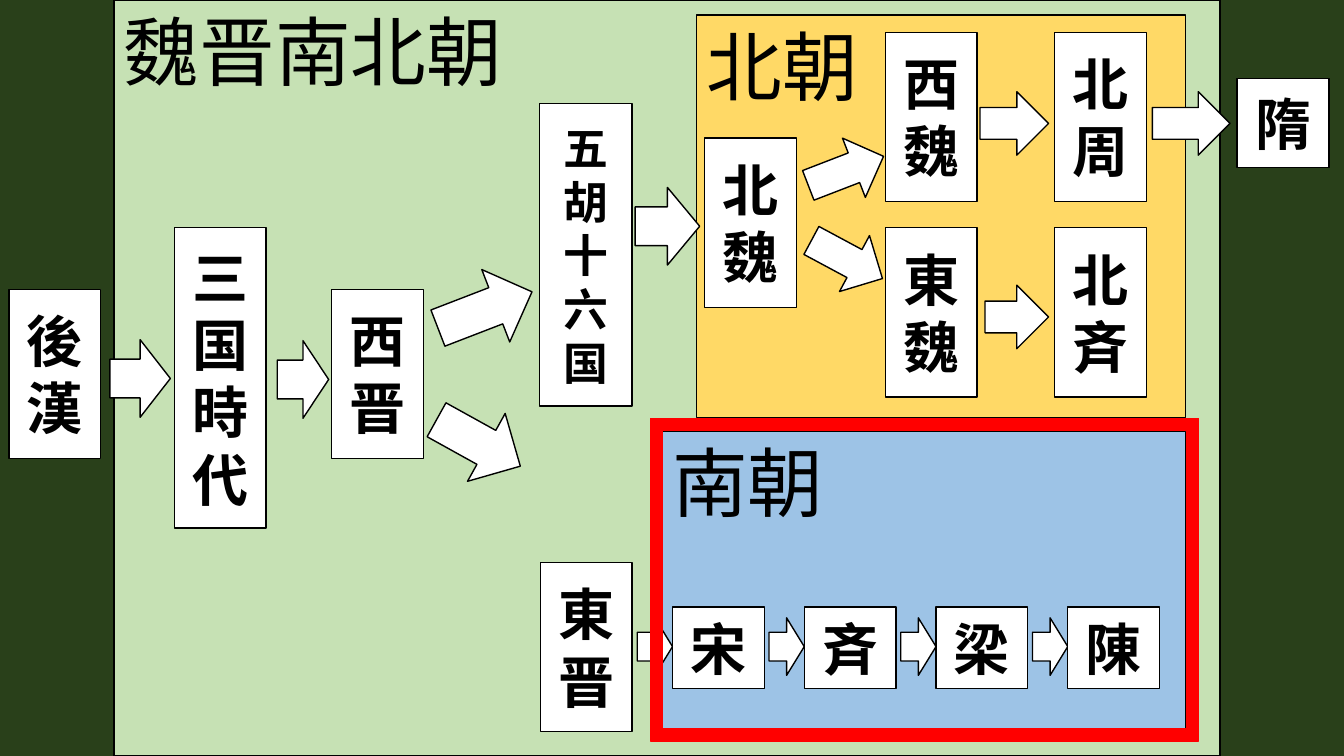
from dataclasses import dataclass

from pptx import Presentation
from pptx.dml.color import RGBColor
from pptx.enum.shapes import MSO_SHAPE as Preset
from pptx.enum.text import MSO_ANCHOR as Anchor, PP_ALIGN as Align
from pptx.util import Inches, Pt


@dataclass(frozen=True)
class Theme:
    font: str = "Calibri"
    backdrop: str = "29401A"
    period: str = "C6E1B4"
    north: str = "FFD966"
    south: str = "9DC3E6"
    highlight: str = "FF0000"
    paper: str = "FFFFFF"
    ink: str = "000000"
    title_size: int = 54
    state_size: int = 40
    long_state_size: int = 32
    line_width: int = 1


@dataclass(frozen=True)
class Box:
    left: float
    top: float
    width: float
    height: float

    def inside(self, left, top, width, height):
        """Return a box whose offset is measured from this box's corner."""
        return Box(self.left + left, self.top + top, width, height)


THEME = Theme()
STATE_WIDTH, STATE_HEIGHT = 0.91, 1.68


def add_preset(page, preset, box, fill=THEME.paper, line=THEME.ink, rotation=0):
    lengths = (Inches(n) for n in (box.left, box.top, box.width, box.height))
    shape = page.shapes.add_shape(preset, *lengths)
    shape.shadow.inherit = False
    shape.fill.solid()
    shape.fill.fore_color.rgb = RGBColor.from_string(fill)
    shape.line.color.rgb = RGBColor.from_string(line)
    shape.line.width = Pt(THEME.line_width)
    shape.rotation = rotation
    return shape


def write(shape, text, size, bold=False, align=Align.LEFT, anchor=Anchor.TOP):
    frame = shape.text_frame
    frame.word_wrap = True
    frame.vertical_anchor = anchor
    frame.text = text
    for para in frame.paragraphs:
        para.alignment = align
        para.font.name = THEME.font
        para.font.size = Pt(size)
        para.font.bold = bold
        para.font.color.rgb = RGBColor.from_string(THEME.ink)


def add_panel(page, box, title, fill):
    write(add_preset(page, Preset.RECTANGLE, box, fill), title, THEME.title_size)


def add_state(page, box, name, size=THEME.state_size):
    """Add a dynasty box, narrow enough for its name to run downwards."""
    shape = add_preset(page, Preset.RECTANGLE, box)
    write(shape, name, size, bold=True, align=Align.CENTER, anchor=Anchor.MIDDLE)


def add_arrow(page, box, rotation=0):
    add_preset(page, Preset.RIGHT_ARROW, box, rotation=rotation)


def draw_north(page, box):
    add_panel(page, box, "北朝", THEME.north)
    for name, left, top in (
        ("北魏", 0.08, 1.22),
        ("西魏", 1.87, 0.17),
        ("東魏", 1.87, 2.11),
        ("北周", 3.55, 0.17),
        ("北斉", 3.55, 2.11),
    ):
        add_state(page, box.inside(left, top, STATE_WIDTH, STATE_HEIGHT), name)
    for left, top, width, height, rotation in (
        (-0.61, 1.71, 0.64, 0.77, 0),
        (1.08, 1.23, 0.8, 0.63, 338.9),
        (1.09, 2.11, 0.8, 0.63, 28.2),
        (2.81, 0.76, 0.68, 0.63, 0),
        (2.86, 2.68, 0.63, 0.63, 0),
        (4.52, 0.76, 0.77, 0.63, 0),
    ):
        add_arrow(page, box.inside(left, top, width, height), rotation)


def draw_south(page, box):
    """Draw the southern dynasties, each entered by an arrow, in a red frame."""
    add_panel(page, box, "南朝", THEME.south)
    arrow_width, step = 0.35, 3.92 / 3
    for index, name in enumerate("宋斉梁陳"):
        left = 0.1 + index * step
        add_arrow(page, box.inside(left - arrow_width, 1.85, arrow_width, 0.57))
        add_state(page, box.inside(left, 1.74, STATE_WIDTH, 0.81), name)
    outline = add_preset(page, Preset.FRAME, box.inside(-0.12, -0.13, 5.44, 3.2),
                         THEME.highlight, THEME.highlight)
    outline.adjustments[0] = 0.037


def draw_early_states(page, box):
    """Draw the line from Later Han to the split between north and south."""
    for name, left, top, height in (
        ("後漢", -1.04, 2.87, STATE_HEIGHT),
        ("三国時代", 0.6, 2.26, 2.98),
        ("西晋", 2.16, 2.87, STATE_HEIGHT),
        ("東晋", 4.23, 5.58, STATE_HEIGHT),
    ):
        add_state(page, box.inside(left, top, STATE_WIDTH, height), name)
    add_state(page, box.inside(4.22, 1.03, 0.92, 3), "五胡\n十六国", THEME.long_state_size)
    for left, top, width, rotation in (
        (-0.04, 3.37, 0.6, 0),
        (1.62, 3.38, 0.51, 0),
        (3.18, 2.69, 1, 338.9),
        (3.14, 4.01, 0.95, 29),
    ):
        add_arrow(page, box.inside(left, top, width, 0.77), rotation)


def draw_period(page, box):
    add_panel(page, box, "魏晋南北朝", THEME.period)
    draw_early_states(page, box)
    draw_north(page, box.inside(5.78, 0.15, 4.85, 3.99))
    draw_south(page, box.inside(5.44, 4.28, 5.19, 3.07))
    add_state(page, box.inside(11.14, 0.78, STATE_WIDTH, 0.88), "隋")


def main():
    deck = Presentation()
    deck.slide_width, deck.slide_height = Inches(13.33), Inches(7.5)
    page = deck.slides.add_slide(deck.slide_layouts[6])
    page.background.fill.solid()
    page.background.fill.fore_color.rgb = RGBColor.from_string(THEME.backdrop)
    draw_period(page, Box(1.13, 0, 10.97, 7.5))
    deck.save("out.pptx")


if __name__ == "__main__":
    main()
